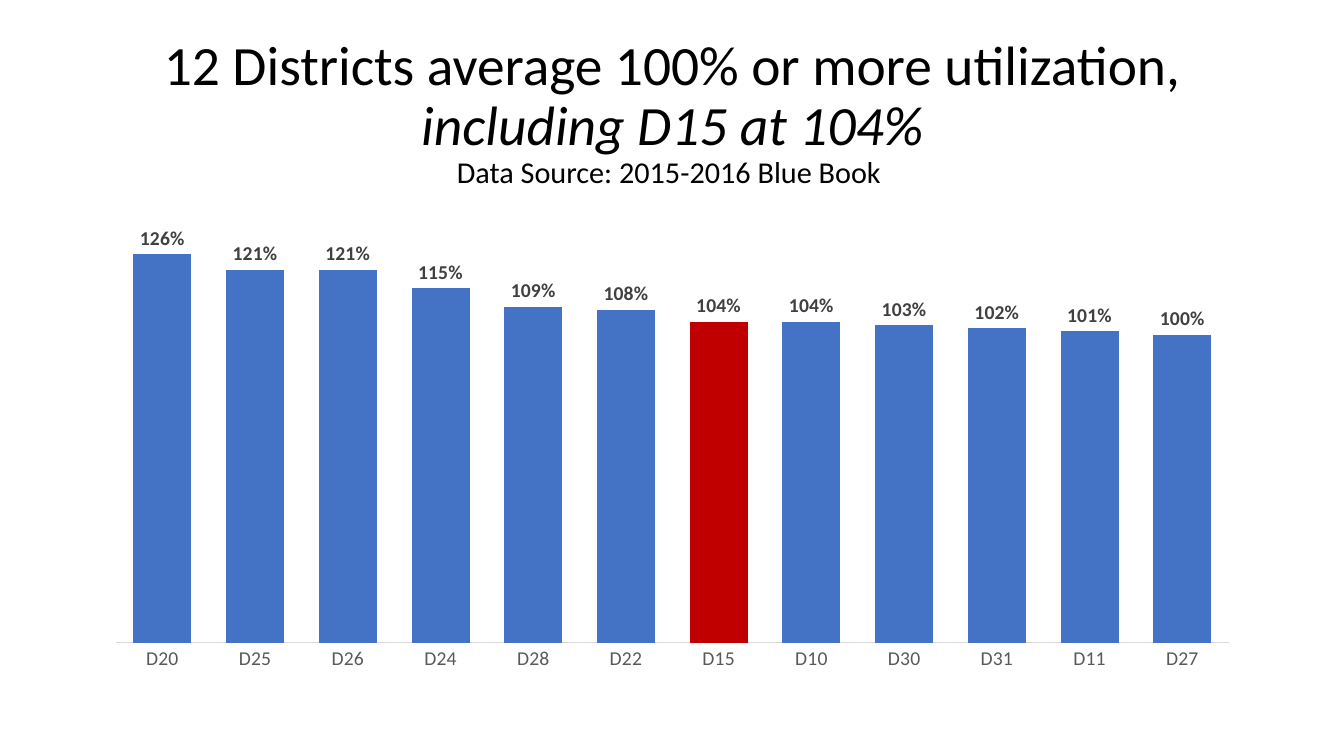
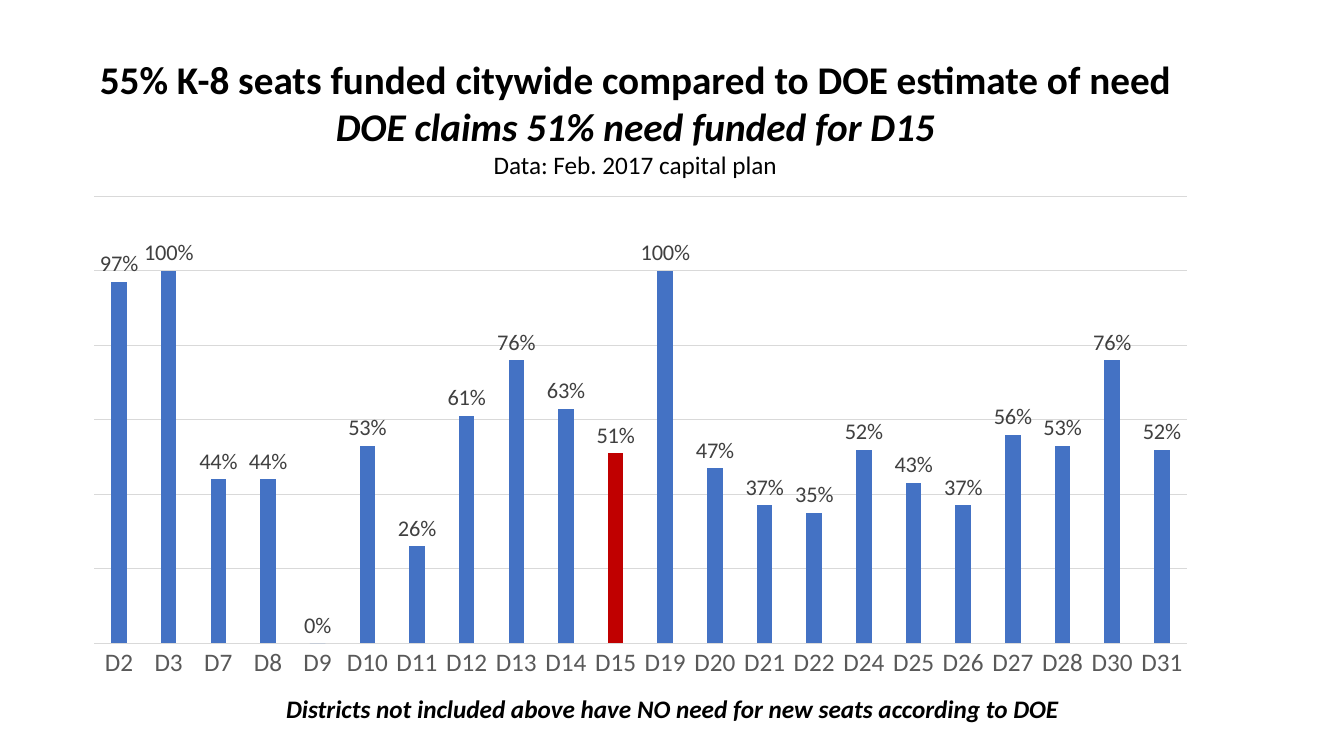
from pptx import Presentation, util as u
from pptx.chart.data import CategoryChartData
from pptx.dml.color import RGBColor
from pptx.enum import chart as charts, text
from pptx.oxml import parse_xml
from pptx.oxml.ns import nsdecls

FONT = "Calibri"
BLACK, LABEL_GREY, AXIS_GREY, LINE_GREY = "000000", "404040", "595959", "D9D9D9"
BAR_BLUE, HIGHLIGHT_RED = "4472C4", "C00000"
HIGHLIGHT = "D15"

UTILIZATION = {
    "D20": 1.26, "D25": 1.21, "D26": 1.21, "D24": 1.15, "D28": 1.09, "D22": 1.08,
    "D15": 1.04, "D10": 1.04, "D30": 1.03, "D31": 1.02, "D11": 1.01, "D27": 1,
}
FUNDED_NEED = {
    "D2": 0.97, "D3": 1, "D7": 0.44, "D8": 0.44, "D9": 0, "D10": 0.53,
    "D11": 0.26, "D12": 0.61, "D13": 0.76, "D14": 0.63, "D15": 0.51, "D19": 1,
    "D20": 0.47, "D21": 0.37, "D22": 0.35, "D24": 0.52, "D25": 0.43, "D26": 0.37,
    "D27": 0.56, "D28": 0.53, "D30": 0.76, "D31": 0.52,
}


def color(hex_string):
    return RGBColor.from_string(hex_string)


def format_font(font, size, hex_string=BLACK, **values):
    values = {"name": FONT, "size": u.Pt(size), "bold": False, "italic": False, **values}
    for name, value in values.items():
        setattr(font, name, value)
    font.color.rgb = color(hex_string)


def format_line(line):
    line.color.rgb = color(LINE_GREY)
    line.width = u.Pt(0.75)


def place(shape, box):
    for name, length in zip(("left", "top", "width", "height"), box):
        setattr(shape, name, u.Cm(length))


def write_paragraphs(frame, paragraphs, **paragraph_format):
    """Fill the frame; each paragraph is a list of (words, size, font values)."""
    frame.word_wrap = True
    frame.auto_size = text.MSO_AUTO_SIZE.NONE
    for index, runs in enumerate(paragraphs):
        paragraph = frame.add_paragraph() if index else frame.paragraphs[0]
        for name, value in paragraph_format.items():
            setattr(paragraph, name, value)
        for words, size, values in runs:
            run = paragraph.add_run()
            run.text = words
            format_font(run.font, size, **values)


def add_title(slide, box, paragraphs, anchor, line_spacing):
    title = slide.shapes.title
    place(title, box)
    title.text_frame.vertical_anchor = anchor
    write_paragraphs(title.text_frame, paragraphs,
                     alignment=text.PP_ALIGN.CENTER, line_spacing=line_spacing)


def add_note(slide, box, words):
    note = slide.shapes.add_textbox(*map(u.Cm, box))
    write_paragraphs(note.text_frame, [[(words, 18, {"bold": True, "italic": True})]])


def set_plot_layout(chart, x, y, w, h):
    """Fix the inner plot area, in fractions of the chart."""
    plot_area = chart.plots[0]._element.getparent()
    for layout in plot_area.findall("{*}layout"):
        plot_area.remove(layout)
    sizes = "".join(f'<c:{name} val="{value}"/>'
                    for name, value in zip("xywh", (x, y, w, h)))
    plot_area.insert(0, parse_xml(
        f'<c:layout {nsdecls("c")}><c:manualLayout><c:layoutTarget val="inner"/>'
        f'<c:xMode val="edge"/><c:yMode val="edge"/>{sizes}'
        "</c:manualLayout></c:layout>"))


def add_district_chart(slide, box, shares, maximum, gap, axis_size, label_size,
                       plot_height, bold_labels=False, gridlines=False):
    data = CategoryChartData(number_format="0%")
    data.categories = list(shares)
    data.add_series("Series 1", list(shares.values()))
    chart = slide.shapes.add_chart(charts.XL_CHART_TYPE.COLUMN_CLUSTERED,
                                   *map(u.Cm, box), data).chart
    chart.has_legend = chart.has_title = False
    format_font(chart.font, 10)
    set_plot_layout(chart, 0.02, 0.02, 0.96, plot_height)

    category_axis, value_axis = chart.category_axis, chart.value_axis
    category_axis.major_tick_mark = charts.XL_TICK_MARK.NONE
    format_font(category_axis.tick_labels.font, axis_size, AXIS_GREY)
    format_line(category_axis.format.line)
    value_axis.minimum_scale, value_axis.maximum_scale = 0, maximum
    value_axis.major_unit = 0.2
    value_axis.visible = False
    value_axis.has_major_gridlines = gridlines
    if gridlines:
        format_line(value_axis.major_gridlines.format.line)

    plot = chart.plots[0]
    plot.gap_width, plot.overlap = gap, -27
    plot.vary_by_categories = False
    series = plot.series[0]
    bars = ((series, BAR_BLUE),
            (series.points[list(shares).index(HIGHLIGHT)], HIGHLIGHT_RED))
    for bar, hex_string in bars:
        bar.format.fill.solid()
        bar.format.fill.fore_color.rgb = color(hex_string)

    labels = series.data_labels
    labels.show_value = True
    labels.number_format, labels.number_format_is_linked = "0%", False
    labels.position = charts.XL_LABEL_POSITION.OUTSIDE_END
    format_font(labels.font, label_size, LABEL_GREY, bold=bold_labels)


def add_utilization_slide(presentation):
    slide = presentation.slides.add_slide(presentation.slide_layouts[5])
    add_title(slide, (2.34, 1.02, 29.21, 3.68), [
        [("12 Districts average 100% or more utilization, ", 39.6, {}),
         ("including D15 at 104%", 39.6, {"italic": True})],
        [("Data Source: 2015-2016 Blue Book ", 21.6, {})],
    ], text.MSO_ANCHOR.MIDDLE, 0.9)
    add_district_chart(slide, (2.34, 5.08, 29.21, 12.09), UTILIZATION, maximum=1.4,
                       gap=60, axis_size=14, label_size=14, plot_height=0.9,
                       bold_labels=True)


def add_funding_slide(presentation):
    slide = presentation.slides.add_slide(presentation.slide_layouts[5])
    add_district_chart(slide, (1.8, 4.7, 28.68, 12.65), FUNDED_NEED, maximum=1.2,
                       gap=219, axis_size=18, label_size=16, plot_height=0.89,
                       gridlines=True)
    add_note(slide, (6.96, 17.35, 26.9, 1.7),
             "Districts not included above have NO need for new seats according to DOE")
    add_title(slide, (1.8, 1.27, 28.42, 3.43), [
        [("55% K-8 seats funded citywide compared to DOE estimate of need", 28,
          {"bold": True})],
        [("DOE claims 51% need funded for D15", 28, {"bold": True, "italic": True})],
        [("Data: Feb. 2017 capital plan", 18, {})],
    ], text.MSO_ANCHOR.TOP, 1.0)


def main():
    presentation = Presentation()
    presentation.slide_width, presentation.slide_height = u.Cm(33.87), u.Cm(19.05)
    add_utilization_slide(presentation)
    add_funding_slide(presentation)
    presentation.save("out.pptx")


if __name__ == "__main__":
    main()
